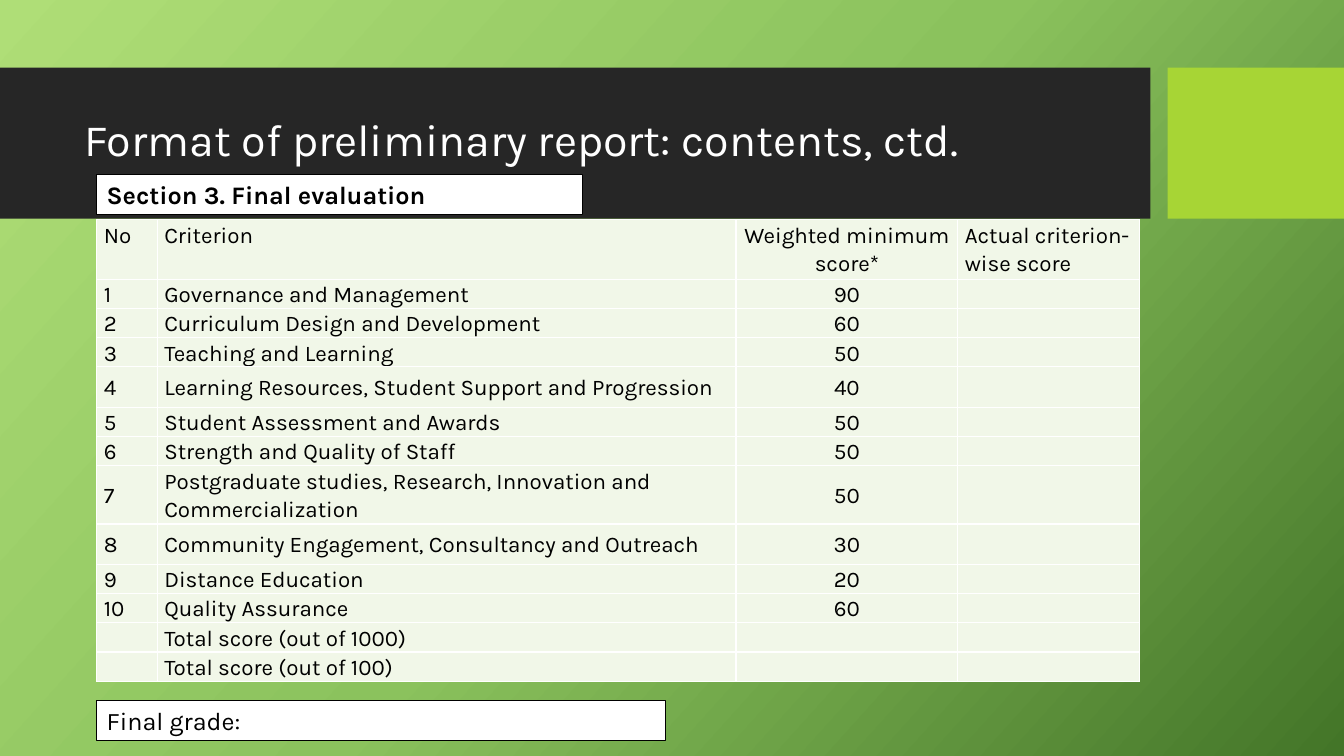
from copy import deepcopy

from lxml.etree import SubElement
from pptx import Presentation
from pptx.dml.color import RGBColor
from pptx.enum.shapes import MSO_SHAPE as Shape
from pptx.enum.text import MSO_ANCHOR as Anchor, PP_ALIGN as Align
from pptx.oxml.ns import qn
from pptx.util import Inches, Pt

FONT = "Karla"
BLACK = RGBColor(0x00, 0x00, 0x00)
WHITE = RGBColor(0xFF, 0xFF, 0xFF)
CHARCOAL = RGBColor(0x26, 0x26, 0x26)
LIME = RGBColor(0xA7, 0xD5, 0x35)
PALE_GREEN = RGBColor(0xF1, 0xF7, 0xE8)
BACKDROP = [
    (0, RGBColor(0xAF, 0xDE, 0x77)),
    (0.5, RGBColor(0x8B, 0xC2, 0x5D)),
    (1, RGBColor(0x43, 0x75, 0x28)),
]

SLIDE_WIDTH, SLIDE_HEIGHT = 13.33, 7.5
CONTENT_LEFT = 0.96
BAND_TOP, BAND_HEIGHT = 0.67, 1.5
LABEL_HEIGHT = 0.4
COLUMN_WIDTHS = [0.6, 5.74, 2.2, 1.8]
SCORE_COLUMN = 2
HEADER_HEIGHT, LINE_HEIGHT = 0.59, 0.29
TALL_ROWS = {4: 0.4, 7: 0.58, 8: 0.4}

HEADER = ["No", "Criterion", "Weighted minimum score*", "Actual criterion-wise score"]
CRITERIA = [
    ("Governance and Management", 90),
    ("Curriculum Design and Development", 60),
    ("Teaching and Learning", 50),
    ("Learning Resources, Student Support and Progression", 40),
    ("Student Assessment and Awards", 50),
    ("Strength and Quality of Staff", 50),
    ("Postgraduate studies, Research, Innovation and Commercialization", 50),
    ("Community Engagement, Consultancy and Outreach", 30),
    ("Distance Education", 20),
    ("Quality Assurance", 60),
]
TOTALS = ["Total score (out of 1000)", "Total score (out of 100)"]


def style_text(paragraph, size, color, bold=False):
    font = paragraph.font
    font.name, font.size, font.bold = FONT, Pt(size), bold
    font.color.rgb = color


def paint_background(slide):
    fill = slide.background.fill
    fill.gradient()
    fill.gradient_angle = 318
    stop_list = next(slide.element.iter(qn("a:gsLst")))
    stop_list.insert(1, deepcopy(stop_list[0]))
    for stop, (position, color) in zip(fill.gradient_stops, BACKDROP):
        stop.position = position
        stop.color.rgb = color


def add_rectangle(slide, left, top, width, height, color):
    rectangle = slide.shapes.add_shape(
        Shape.RECTANGLE, Inches(left), Inches(top), Inches(width), Inches(height))
    rectangle.shadow.inherit = False
    rectangle.fill.solid()
    rectangle.fill.fore_color.rgb = color
    rectangle.line.fill.background()
    return rectangle


def add_label(slide, text, top, width, bold=False):
    label = add_rectangle(slide, CONTENT_LEFT, top, width, LABEL_HEIGHT, WHITE)
    label.line.color.rgb = BLACK
    label.line.width = Pt(1)
    frame = label.text_frame
    frame.text = text
    frame.vertical_anchor = Anchor.MIDDLE
    paragraph = frame.paragraphs[0]
    paragraph.alignment = Align.LEFT
    style_text(paragraph, 18, BLACK, bold)


def place_title(slide, text):
    """Fill the title placeholder and bring it in front of the bands."""
    title = slide.shapes.title
    title.left, title.top = Inches(0.74), Inches(0.82)
    title.width, title.height = Inches(10.51), Inches(1.18)
    frame = title.text_frame
    frame.text = text
    frame.vertical_anchor = Anchor.MIDDLE
    paragraph = frame.paragraphs[0]
    paragraph.alignment = Align.LEFT
    paragraph.line_spacing = 0.9
    style_text(paragraph, 32, WHITE)
    title.element.getparent().append(title.element)


def add_borders(cell):
    properties = cell._tc.get_or_add_tcPr()
    for side in ("lnL", "lnR", "lnT", "lnB"):
        border = SubElement(properties, qn(f"a:{side}"), w=str(Pt(1)))
        color = SubElement(SubElement(border, qn("a:solidFill")), qn("a:srgbClr"))
        color.set("val", str(WHITE))


def fill_cell(cell, text, anchor, alignment):
    add_borders(cell)
    cell.fill.solid()
    cell.fill.fore_color.rgb = PALE_GREEN
    cell.margin_left = cell.margin_right = Inches(0.07)
    cell.margin_top, cell.margin_bottom = Inches(0.01), 0
    cell.vertical_anchor = anchor
    cell.text = text
    paragraph = cell.text_frame.paragraphs[0]
    paragraph.alignment = alignment
    paragraph.line_spacing = 1.07 if text else 0.9
    style_text(paragraph, 16, BLACK)


def add_score_table(slide, top):
    scored = [[str(number), name, str(score), ""]
              for number, (name, score) in enumerate(CRITERIA, 1)]
    rows = [HEADER, *scored, *(["", total, "", ""] for total in TOTALS)]
    heights = [HEADER_HEIGHT] + [TALL_ROWS.get(i, LINE_HEIGHT) for i in range(1, len(rows))]
    table = slide.shapes.add_table(
        len(rows), len(COLUMN_WIDTHS), Inches(CONTENT_LEFT), Inches(top),
        Inches(sum(COLUMN_WIDTHS)), Inches(sum(heights))).table
    for column, width in zip(table.columns, COLUMN_WIDTHS):
        column.width = Inches(width)
    for r, (values, height) in enumerate(zip(rows, heights)):
        table.rows[r].height = Inches(height)
        anchor = Anchor.MIDDLE if 1 <= r <= len(CRITERIA) else Anchor.TOP
        for c, text in enumerate(values):
            alignment = Align.CENTER if c == SCORE_COLUMN else Align.LEFT
            fill_cell(table.cell(r, c), text, anchor, alignment)


def main():
    presentation = Presentation()
    presentation.slide_width = Inches(SLIDE_WIDTH)
    presentation.slide_height = Inches(SLIDE_HEIGHT)
    slide = presentation.slides.add_slide(presentation.slide_layouts[5])

    paint_background(slide)
    add_rectangle(slide, 0, BAND_TOP, 11.41, BAND_HEIGHT, CHARCOAL)
    add_rectangle(slide, 11.58, BAND_TOP, 1.75, BAND_HEIGHT, LIME)
    place_title(slide, "Format of preliminary report: contents, ctd.")
    add_label(slide, "Section 3. Final evaluation", 1.73, 4.82, bold=True)
    add_label(slide, "Final grade:", 6.95, 5.64)
    add_score_table(slide, 2.18)
    presentation.save("out.pptx")


if __name__ == "__main__":
    main()
